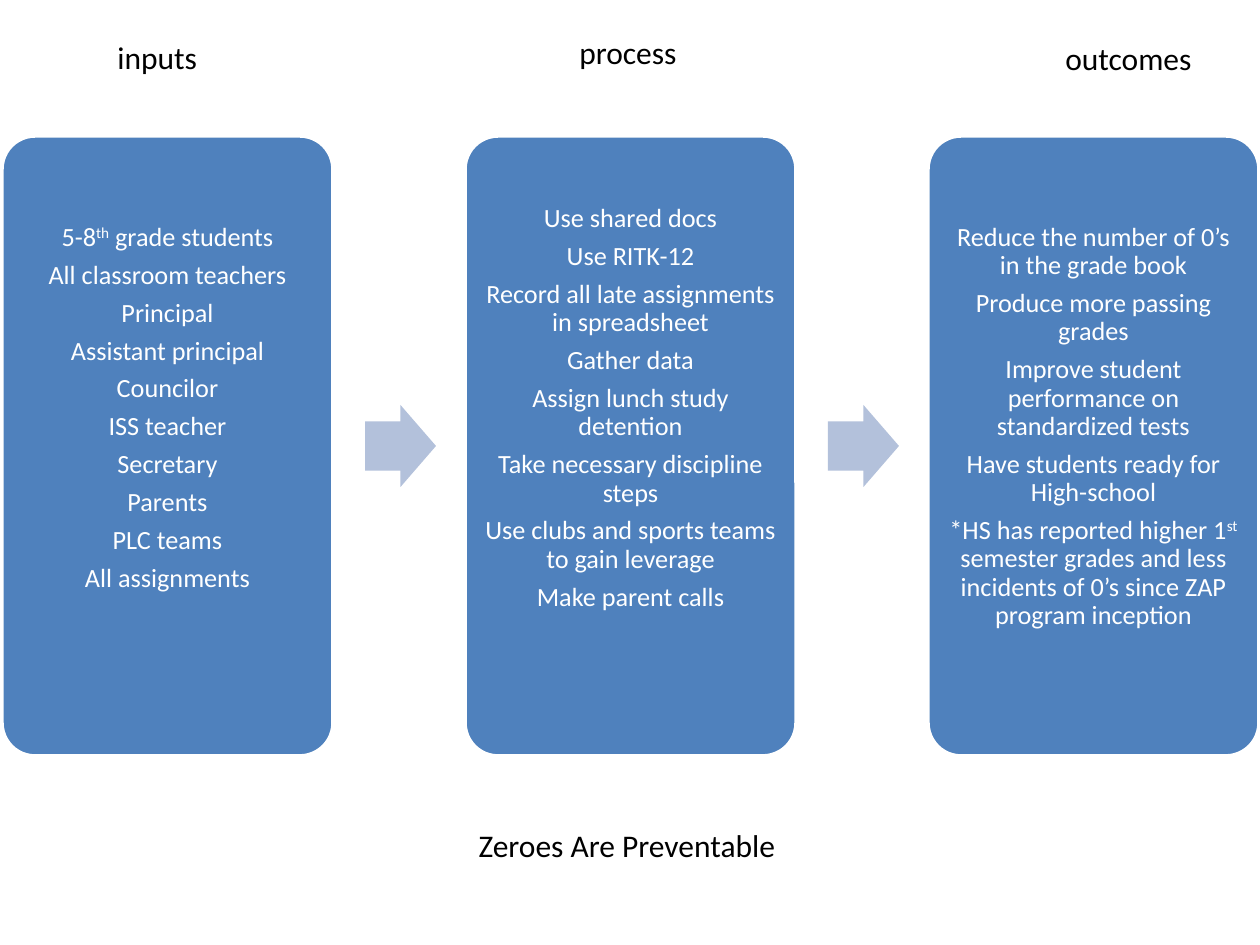
from pptx import Presentation
from pptx.dml.color import RGBColor
from pptx.enum.shapes import MSO_SHAPE
from pptx.enum.text import MSO_ANCHOR, MSO_AUTO_SIZE, PP_ALIGN
from pptx.util import Emu, Pt

BLUE = RGBColor(0x4F, 0x81, 0xBD)
PALE = RGBColor(0xB3, 0xC1, 0xDB)
WHITE = RGBColor(0xFF, 0xFF, 0xFF)
BLACK = RGBColor(0x00, 0x00, 0x00)
FONT = "Calibri"

TOP, WIDE, HIGH = 136, 331, 620
START, PITCH = 2, 463
HEAD_HIGH = 50

STAGES = [
    ("inputs", (105, 32, 106), 75, [
        "5-8^th^ grade students",
        "All classroom teachers",
        "Principal",
        "Assistant principal",
        "Councilor",
        "ISS teacher",
        "Secretary",
        "Parents",
        "PLC teams",
        "All assignments",
    ]),
    ("process", (567, 27, 123), 75, [
        "Use shared docs",
        "Use RITK-12",
        "Record all late assignments in spreadsheet",
        "Gather data",
        "Assign lunch study detention",
        "Take necessary discipline steps",
        "Use clubs and sports teams to gain leverage",
        "Make parent calls",
    ]),
    ("outcomes", (1053, 33, 152), 38, [
        "Reduce the number of 0’s in the grade book",
        "Produce more passing grades",
        "Improve student performance on standardized tests",
        "Have students ready for High-school",
        "*HS has reported higher 1^st^ semester grades and less "
        "incidents of 0’s since ZAP program inception",
    ]),
]


def px(*vals):
    """Turn pixel lengths into EMU."""
    return [Emu(round(val * 914400 / 126)) for val in vals]


def add_runs(para, text, size, color):
    """Add text run by run, raising the parts between carets."""
    for num, part in enumerate(text.split("^")):
        run = para.add_run()
        run.text = part
        run.font.name = FONT
        run.font.size = Pt(size)
        run.font.color.rgb = color
        if num % 2:
            run.font._element.set("baseline", "30000")


def add_shape(slide, kind, box, fill):
    """Add a flat filled shape in the box."""
    shape = slide.shapes.add_shape(kind, *px(*box))
    shape.shadow.inherit = False
    shape.fill.solid()
    shape.fill.fore_color.rgb = fill
    return shape


def add_card(slide, box, items, lift):
    """Add a rounded card whose centred lines sit above a bottom gap."""
    card = add_shape(slide, MSO_SHAPE.ROUNDED_RECTANGLE, box, BLUE)
    card.adjustments[0] = 0.1
    card.line.color.rgb = WHITE
    card.line.width = Pt(2)
    frame = card.text_frame
    frame.word_wrap = True
    frame.vertical_anchor = MSO_ANCHOR.MIDDLE
    frame.margin_left, frame.margin_top, frame.margin_right = px(8, 8, 8)
    frame.margin_bottom, = px(8 + lift)
    for num, item in enumerate(items):
        para = frame.add_paragraph() if num else frame.paragraphs[0]
        para.alignment = PP_ALIGN.CENTER
        para.line_spacing = 0.9
        para.space_after = Pt(5.4)
        add_runs(para, item, 15, WHITE)


def add_arrow(slide, box):
    """Add a pale arrow that points to the next card."""
    arrow = add_shape(slide, MSO_SHAPE.RIGHT_ARROW, box, PALE)
    arrow.adjustments[0] = 0.6
    arrow.adjustments[1] = 0.5
    arrow.line.fill.background()


def set_label(shape, text):
    """Format a one-line label."""
    frame = shape.text_frame
    frame.word_wrap = False
    frame.auto_size = MSO_AUTO_SIZE.SHAPE_TO_FIT_TEXT
    frame.vertical_anchor = MSO_ANCHOR.TOP
    para = frame.paragraphs[0]
    para.alignment = PP_ALIGN.LEFT
    add_runs(para, text, 18, BLACK)


def set_title(slide, box, text):
    """Move the title to the box and fill it."""
    title = slide.shapes.title
    title.left, title.top, title.width, title.height = px(*box)
    set_label(title, text)


def add_flow(slide, box):
    """Add the stages with their heads and arrows, left to right."""
    left, top, wide, high = box
    for num, (name, (x, y, w), lift, items) in enumerate(STAGES):
        edge = left + num * PITCH
        add_card(slide, (edge, top, wide, high), items, lift)
        if num < len(STAGES) - 1:
            add_arrow(slide, (edge + 363, top + (high - 82) // 2, 71, 82))
        head = slide.shapes.add_textbox(*px(x, y, w, HEAD_HIGH))
        set_label(head, name)


def main():
    """Build and save the slide."""
    deck = Presentation()
    deck.slide_width, deck.slide_height = px(1260, 945)
    slide = deck.slides.add_slide(deck.slide_layouts[5])
    add_flow(slide, (START, TOP, WIDE, HIGH))
    set_title(slide, (466, 820, 325, HEAD_HIGH), "Zeroes Are Preventable")
    deck.save("out.pptx")


if __name__ == "__main__":
    main()
